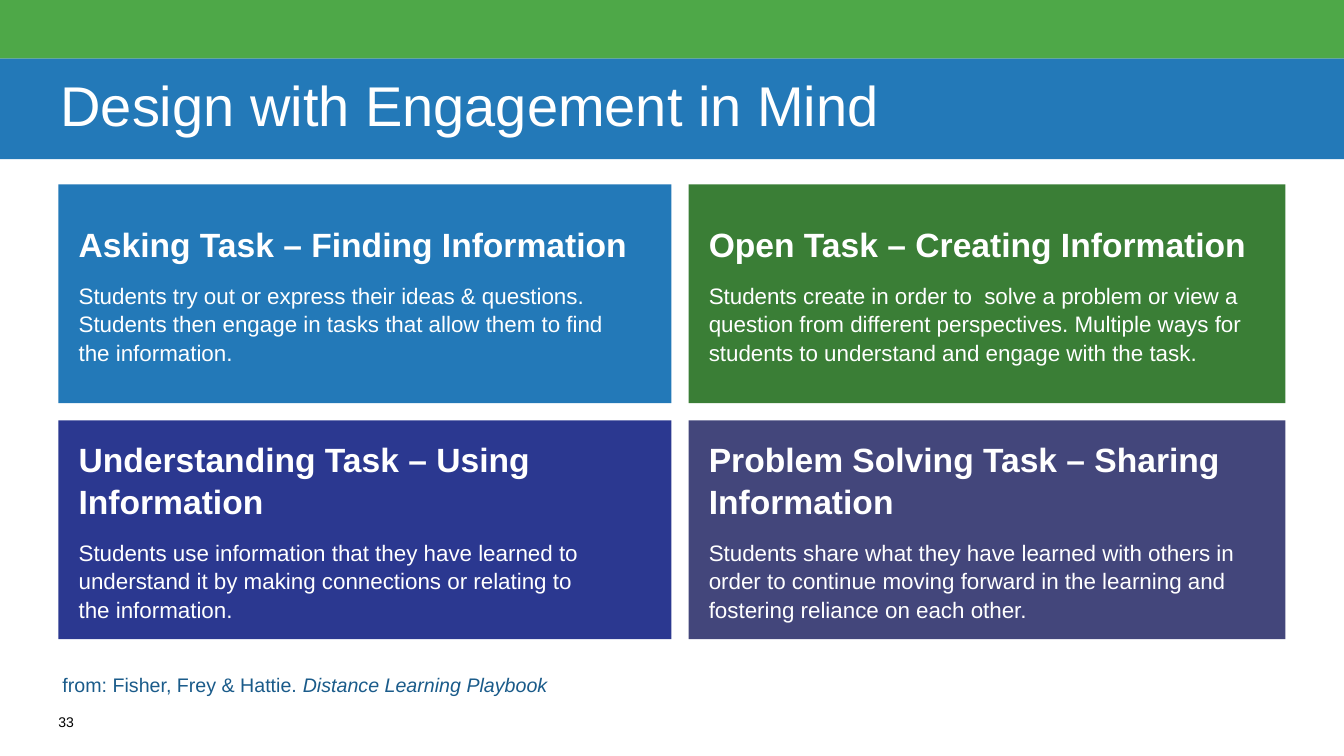
import pptx
import pptx.dml.color
import pptx.enum.shapes
import pptx.enum.text
import pptx.util

Inches = pptx.util.Inches
Pt = pptx.util.Pt
MIDDLE = pptx.enum.text.MSO_ANCHOR.MIDDLE
LEFT = pptx.enum.text.PP_ALIGN.LEFT

COLORS = {
    "white": "FFFFFF",
    "black": "000000",
    "green": "4EA848",
    "blue": "2379B8",
    "dark green": "3A7E36",
    "indigo": "2B3890",
    "slate": "43467B",
    "source": "1A5B8A",
}


def fill_shape(shape, color):
    shape.fill.solid()
    shape.fill.fore_color.rgb = pptx.dml.color.RGBColor.from_string(COLORS[color])
    shape.line.fill.background()


def add_span(para, text, size, color, bold=False, italic=False):
    span = para.add_run()
    span.text = text
    span.font.name = "Arial"
    span.font.size = Pt(size)
    span.font.bold = bold
    span.font.italic = italic
    span.font.color.rgb = pptx.dml.color.RGBColor.from_string(COLORS[color])


deck = pptx.Presentation()
deck.slide_width = Inches(13.33)
deck.slide_height = Inches(7.5)
page = deck.slides.add_slide(deck.slide_layouts[5])
rectangle = pptx.enum.shapes.MSO_SHAPE.RECTANGLE

# Green band across the top
band = page.shapes.add_shape(rectangle, 0, 0, deck.slide_width, Inches(0.58))
band.shadow.inherit = False
fill_shape(band, "green")

# Title bar
title = page.shapes.title
title.left, title.top = Inches(0), Inches(0.58)
title.width, title.height = deck.slide_width, Inches(1)
fill_shape(title, "blue")
frame = title.text_frame
frame.word_wrap = True
frame.auto_size = pptx.enum.text.MSO_AUTO_SIZE.NONE
frame.vertical_anchor = MIDDLE
frame.margin_left = frame.margin_right = Inches(0.6)
frame.margin_top = frame.margin_bottom = 0
para = frame.paragraphs[0]
para.alignment = LEFT
para.line_spacing = 0.9
add_span(para, "Design with Engagement in Mind", 40, "white")

# Four task cards, row by row; each body is a list of lines split by a break
tasks = [
    ("blue", "Asking Task – Finding Information",
     ["Students try out or express their ideas & questions. Students then engage "
      "in tasks that allow them to find ", "the information."]),
    ("dark green", "Open Task – Creating Information",
     ["Students create in order to  solve a problem or view a question from "
      "different perspectives. Multiple ways for students to understand and "
      "engage with the task."]),
    ("indigo", "Understanding Task – Using Information",
     ["Students use information that they have learned to understand it by making "
      "connections or relating to ", "the information."]),
    ("slate", "Problem Solving Task – Sharing Information",
     ["Students share what they have learned with others in order to continue "
      "moving forward in the learning and fostering reliance on each other."]),
]
columns = [(0.58, 6.08), (6.83, 5.92)]
for index, (color, heading, lines) in enumerate(tasks):
    row, column = divmod(index, 2)
    left, width = columns[column]
    card = page.shapes.add_shape(rectangle, Inches(left), Inches(1.83 + row * 2.34),
                                 Inches(width), Inches(2.17))
    card.shadow.inherit = False
    fill_shape(card, color)
    frame = card.text_frame
    frame.word_wrap = True
    frame.vertical_anchor = MIDDLE
    frame.margin_left = frame.margin_right = Inches(0.2)
    frame.margin_top = frame.margin_bottom = Inches(0.2)
    head, body = frame.paragraphs[0], frame.add_paragraph()
    for para in (head, body):
        para.alignment = LEFT
        para.line_spacing = 1.05
    head.space_after = Pt(12)
    add_span(head, heading, 24, "white", bold=True)
    for number, line in enumerate(lines):
        if number:
            body.add_line_break()
        add_span(body, line, 16, "white")

# Source line and page number
footers = [
    (0.62, 6.68, 11.67, 0.24, 14, "source",
     [("from: Fisher, Frey & Hattie. ", False), ("Distance Learning Playbook", True)]),
    (0.58, 7.08, 0.42, 0.25, 10, "black", [("33", False)]),
]
for left, top, width, height, size, color, spans in footers:
    box = page.shapes.add_textbox(Inches(left), Inches(top), Inches(width), Inches(height))
    frame = box.text_frame
    frame.word_wrap = True
    frame.margin_left = frame.margin_right = 0
    frame.margin_top = frame.margin_bottom = 0
    for text, italic in spans:
        add_span(frame.paragraphs[0], text, size, color, italic=italic)

deck.save("out.pptx")
